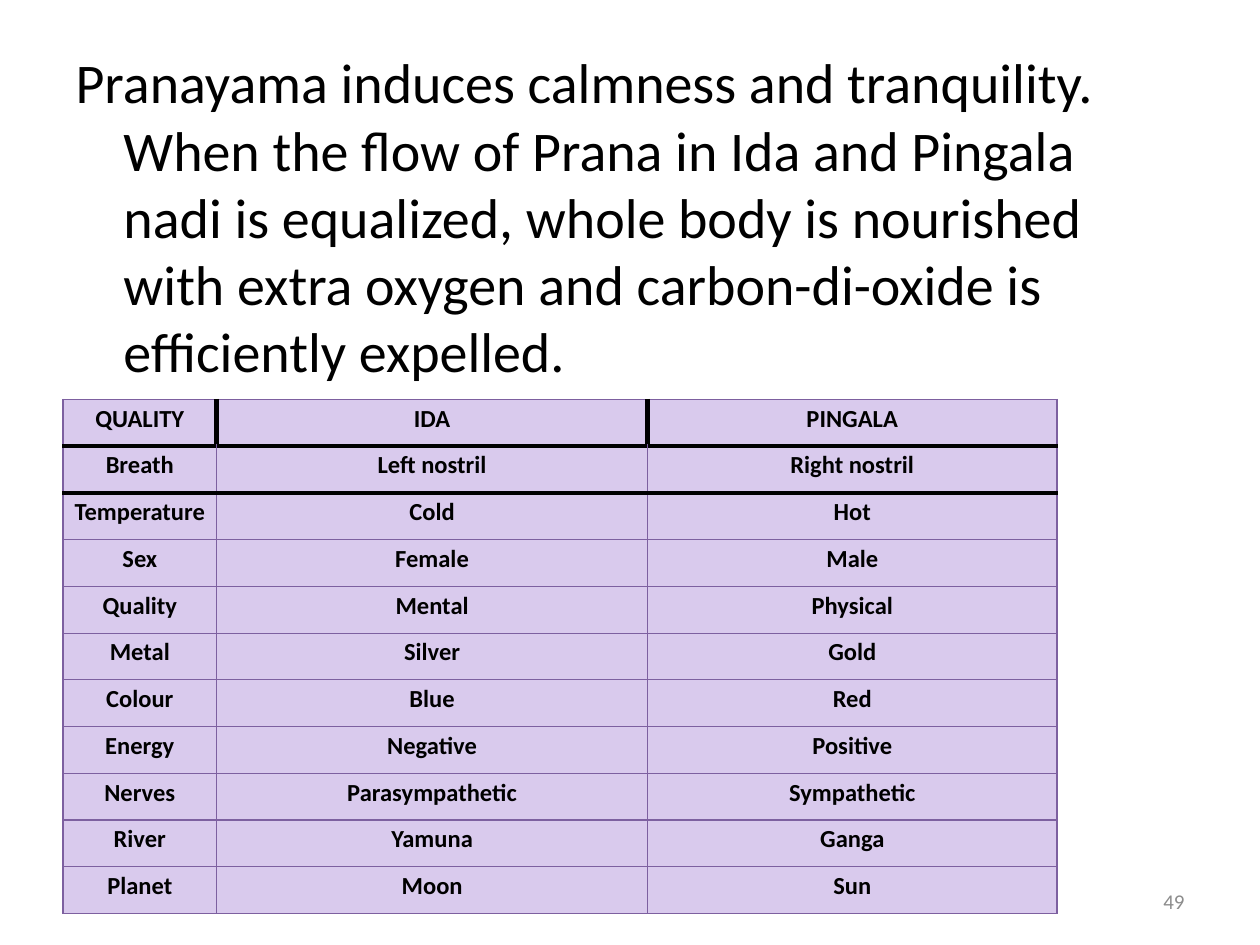
from lxml.etree import SubElement
from pptx import Presentation
from pptx.dml.color import RGBColor
from pptx.enum.text import MSO_ANCHOR, PP_ALIGN
from pptx.oxml.ns import qn
from pptx.util import Inches, Pt

COLORS = {"ink": "000000", "grid": "7D60A0", "cell": "D9CAED", "number": "8C8C8C"}
FONT = "Calibri"
WIDTH, HEIGHT = 10, 7.5
MARGIN = 0.05 * WIDTH
COLUMN_WIDTHS = [1.22, 3.42, 3.25]
THIN, THICK = ("grid", 0.75), ("ink", 3)

MESSAGE = (
    "Pranayama induces calmness and tranquility. When the flow of Prana in Ida "
    "and Pingala nadi is equalized, whole body is nourished with extra oxygen "
    "and carbon-di-oxide is efficiently expelled."
)
QUALITIES = [
    ("QUALITY", "IDA", "PINGALA"),
    ("Breath", "Left nostril", "Right nostril"),
    ("Temperature", "Cold", "Hot"),
    ("Sex", "Female", "Male"),
    ("Quality", "Mental", "Physical"),
    ("Metal", "Silver", "Gold"),
    ("Colour", "Blue", "Red"),
    ("Energy", "Negative", "Positive"),
    ("Nerves", "Parasympathetic", "Sympathetic"),
    ("River", "Yamuna", "Ganga"),
    ("Planet", "Moon", "Sun"),
]


def rgb(name):
    return RGBColor.from_string(COLORS[name])


def format_text(paragraph, size, color="ink", bold=False, align=PP_ALIGN.LEFT):
    paragraph.alignment = align
    font = paragraph.font
    font.name, font.size, font.bold = FONT, Pt(size), bold
    font.color.rgb = rgb(color)


def add_message(slide, left, top, width, height):
    message = slide.placeholders[1]
    message.left, message.top = Inches(left), Inches(top)
    message.width, message.height = Inches(width), Inches(height)
    message.text_frame.text = MESSAGE
    paragraph = message.text_frame.paragraphs[0]
    properties = paragraph._p.get_or_add_pPr()
    properties.set("marL", str(Inches(0.38)))
    properties.set("indent", str(-Inches(0.38)))
    SubElement(properties, qn("a:buNone"))
    format_text(paragraph, 32)


def set_borders(cell, borders):
    properties = cell._tc.get_or_add_tcPr()
    for side, (color, points) in borders.items():
        line = SubElement(properties, qn(f"a:ln{side}"), w=str(Pt(points)))
        fill = SubElement(line, qn("a:solidFill"))
        SubElement(fill, qn("a:srgbClr"), val=COLORS[color])


def add_comparison(slide, left, top, width, height):
    table = slide.shapes.add_table(
        len(QUALITIES), len(COLUMN_WIDTHS),
        Inches(left), Inches(top), Inches(width), Inches(height),
    ).table
    table.first_row = table.horz_banding = False
    for column, share in zip(table.columns, COLUMN_WIDTHS):
        column.width = Inches(width * share / sum(COLUMN_WIDTHS))
    last_column = len(COLUMN_WIDTHS) - 1
    for r, entries in enumerate(QUALITIES):
        table.rows[r].height = Inches(height / len(QUALITIES))
        for c, entry in enumerate(entries):
            cell = table.cell(r, c)
            cell.text = entry
            cell.margin_left = cell.margin_right = Inches(0.07)
            cell.margin_top = cell.margin_bottom = 0
            paragraph = cell.text_frame.paragraphs[0]
            paragraph.line_spacing = 1.15
            format_text(paragraph, 14, bold=True, align=PP_ALIGN.CENTER)
            set_borders(cell, {
                "L": THICK if r == 0 and c > 0 else THIN,
                "R": THICK if r == 0 and c < last_column else THIN,
                "T": THICK if r in (1, 2) else THIN,
                "B": THICK if r in (0, 1) else THIN,
            })
            cell.fill.solid()
            cell.fill.fore_color.rgb = rgb("cell")


def add_page_number(slide, left, top, width, height):
    frame = slide.shapes.add_textbox(
        Inches(left), Inches(top), Inches(width), Inches(height)
    ).text_frame
    frame.word_wrap = True
    frame.vertical_anchor = MSO_ANCHOR.MIDDLE
    frame.text = "49"
    format_text(frame.paragraphs[0], 12, "number", align=PP_ALIGN.RIGHT)


def main():
    presentation = Presentation()
    presentation.slide_width, presentation.slide_height = Inches(WIDTH), Inches(HEIGHT)
    slide = presentation.slides.add_slide(presentation.slide_layouts[1])
    empty_title = slide.shapes.title.element
    empty_title.getparent().remove(empty_title)
    add_message(slide, MARGIN, 0.33, WIDTH - 2 * MARGIN, 2.92)
    add_page_number(slide, WIDTH - MARGIN - 2.33, 6.95, 2.33, 0.4)
    add_comparison(slide, MARGIN, 3.17, sum(COLUMN_WIDTHS), 4.08)
    presentation.save("out.pptx")


if __name__ == "__main__":
    main()
